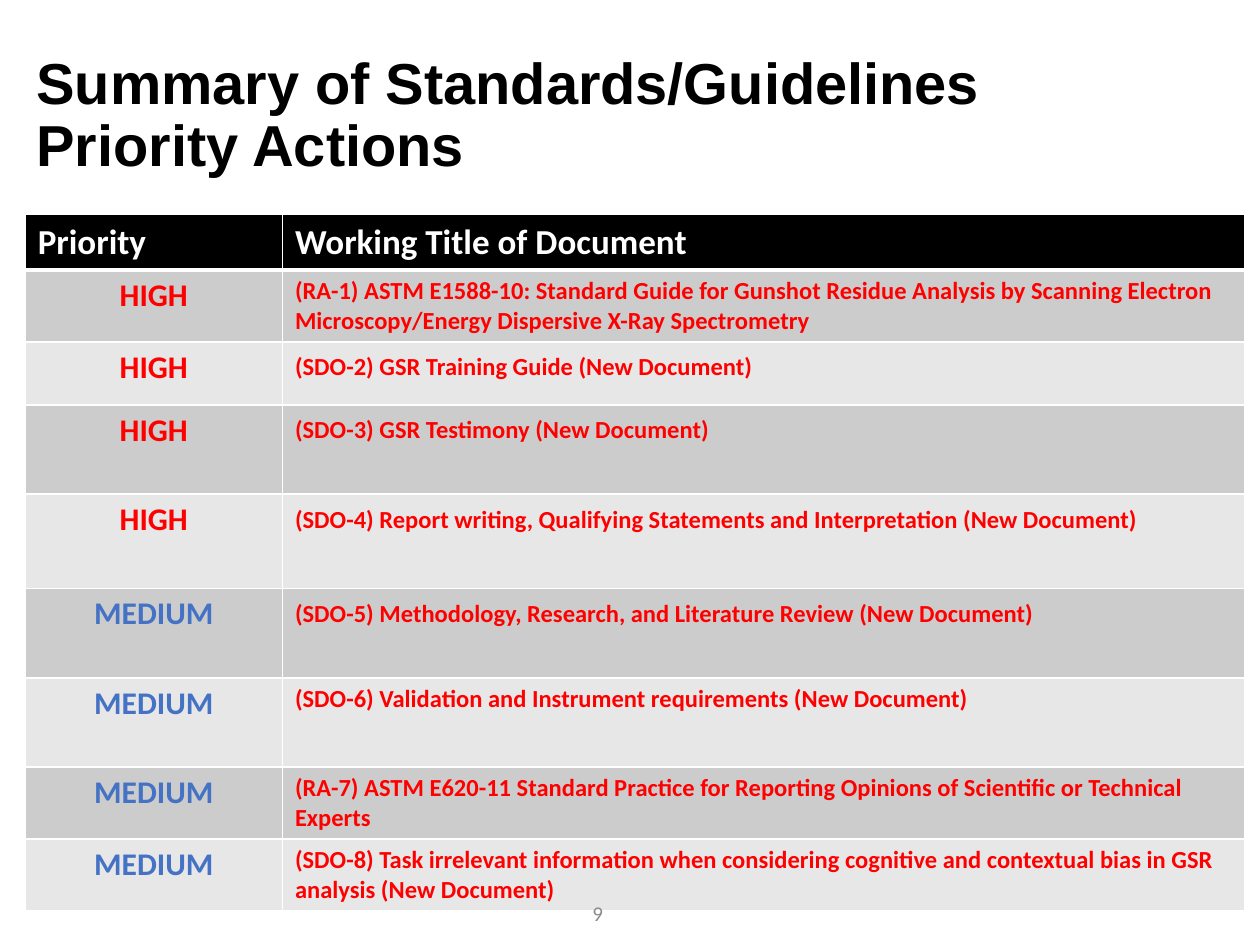
from dataclasses import dataclass

import pptx
import pptx.dml.color
import pptx.enum.text
import pptx.oxml
import pptx.oxml.ns
import pptx.util

Pt = pptx.util.Pt
Align = pptx.enum.text.PP_ALIGN
Anchor = pptx.enum.text.MSO_ANCHOR


@dataclass(frozen=True)
class Theme:
    title_font: str = "Arial"
    body_font: str = "Calibri"
    black: str = "000000"
    white: str = "FFFFFF"
    red: str = "FF0000"
    blue: str = "4472C4"
    gray: str = "8C8C8C"
    bands: tuple = ("CCCCCC", "E7E7E7")
    title_size: int = 33
    header_size: int = 20
    priority_size: int = 18
    document_size: int = 14
    number_size: int = 12


THEME = Theme()
COLUMN_WIDTHS = (147, 550)
HEADER_HEIGHT = 32
HEADERS = ("Priority", "Working Title of Document")
# Priority, document title, row height, line spacing
ACTIONS = (
    ("HIGH", "(RA-1) ASTM E1588-10: Standard Guide for Gunshot Residue Analysis by "
     "Scanning Electron Microscopy/Energy Dispersive X-Ray Spectrometry", 41, 1),
    ("HIGH", "(SDO-2) GSR Training Guide (New Document)", 36, 1.15),
    ("HIGH", "(SDO-3) GSR Testimony (New Document)", 51, 1.15),
    ("HIGH", "(SDO-4) Report writing, Qualifying Statements and Interpretation "
     "(New Document)", 54, 1.15),
    ("MEDIUM", "(SDO-5) Methodology, Research, and Literature Review "
     "(New Document)", 51, 1.15),
    ("MEDIUM", "(SDO-6) Validation and Instrument requirements (New Document)", 51, 1),
    ("MEDIUM", "(RA-7) ASTM E620-11 Standard Practice for Reporting Opinions of "
     "Scientific or Technical Experts", 41, 1),
    ("MEDIUM", "(SDO-8) Task irrelevant information when considering cognitive and "
     "contextual bias in GSR analysis (New Document)", 41, 1),
)


def rgb(color):
    return pptx.dml.color.RGBColor.from_string(color)


def style_paragraph(paragraph, text, font, size, color, bold=True,
                    align=Align.LEFT, spacing=1):
    paragraph.text = text
    paragraph.alignment = align
    paragraph.line_spacing = spacing
    paragraph.font.name = font
    paragraph.font.size = Pt(size)
    paragraph.font.bold = bold
    paragraph.font.color.rgb = rgb(color)


def add_text(slide, box, text, *style, **options):
    """Place one vertically centred paragraph in the box."""
    frame = slide.shapes.add_textbox(*map(Pt, box)).text_frame
    frame.word_wrap = True
    frame.vertical_anchor = Anchor.MIDDLE
    style_paragraph(frame.paragraphs[0], text, *style, **options)


def add_title(slide, box):
    add_text(slide, box, "Summary of Standards/Guidelines Priority Actions",
             THEME.title_font, THEME.title_size, THEME.black, spacing=0.9)


def add_page_number(slide, box):
    add_text(slide, box, "9", THEME.body_font, THEME.number_size, THEME.gray,
             bold=False, align=Align.CENTER)


def set_borders(cell, top=1, bottom=1):
    """Draw white cell borders, with top and bottom widths in points."""
    properties = cell._tc.get_or_add_tcPr()
    widths = {"lnL": 1, "lnR": 1, "lnT": top, "lnB": bottom}
    for index, (side, width) in enumerate(widths.items()):
        properties.insert(index, pptx.oxml.parse_xml(
            f'<a:{side} {pptx.oxml.ns.nsdecls("a")} w="{Pt(width)}"><a:solidFill>'
            f'<a:srgbClr val="{THEME.white}"/></a:solidFill></a:{side}>'))


def fill_cell(cell, fill, text, size, color, **options):
    cell.fill.solid()
    cell.fill.fore_color.rgb = rgb(fill)
    style_paragraph(cell.text_frame.paragraphs[0], text, THEME.body_font, size,
                    color, **options)


def add_actions_table(slide, box):
    table = slide.shapes.add_table(len(ACTIONS) + 1, len(HEADERS),
                                   *map(Pt, box)).table
    for column, width in zip(table.columns, COLUMN_WIDTHS):
        column.width = Pt(width)
    table.rows[0].height = Pt(HEADER_HEIGHT)
    for cell, header in zip(table.rows[0].cells, HEADERS):
        fill_cell(cell, THEME.black, header, THEME.header_size, THEME.white)
        cell.vertical_anchor = Anchor.MIDDLE
        set_borders(cell, bottom=3)

    priority_colors = {"HIGH": THEME.red, "MEDIUM": THEME.blue}
    for index, (priority, document, height, spacing) in enumerate(ACTIONS):
        row = table.rows[index + 1]
        row.height = Pt(height)
        priority_cell, document_cell = row.cells
        band = THEME.bands[index % 2]
        fill_cell(priority_cell, band, priority, THEME.priority_size,
                  priority_colors[priority], align=Align.CENTER)
        fill_cell(document_cell, band, document, THEME.document_size, THEME.red,
                  spacing=spacing)
        for cell in row.cells:
            set_borders(cell, top=3 if index == 0 else 1)


def main():
    presentation = pptx.Presentation()
    presentation.slide_width = Pt(720)
    presentation.slide_height = Pt(540)
    slide = presentation.slides.add_slide(presentation.slide_layouts[6])
    add_title(slide, (13.7, 14.4, 620.6, 104.4))
    table_height = HEADER_HEIGHT + sum(action[2] for action in ACTIONS)
    add_actions_table(slide, (14.4, 122.4, sum(COLUMN_WIDTHS), table_height))
    add_page_number(slide, (260.6, 507.6, 162, 28.8))
    presentation.save("out.pptx")


if __name__ == "__main__":
    main()
